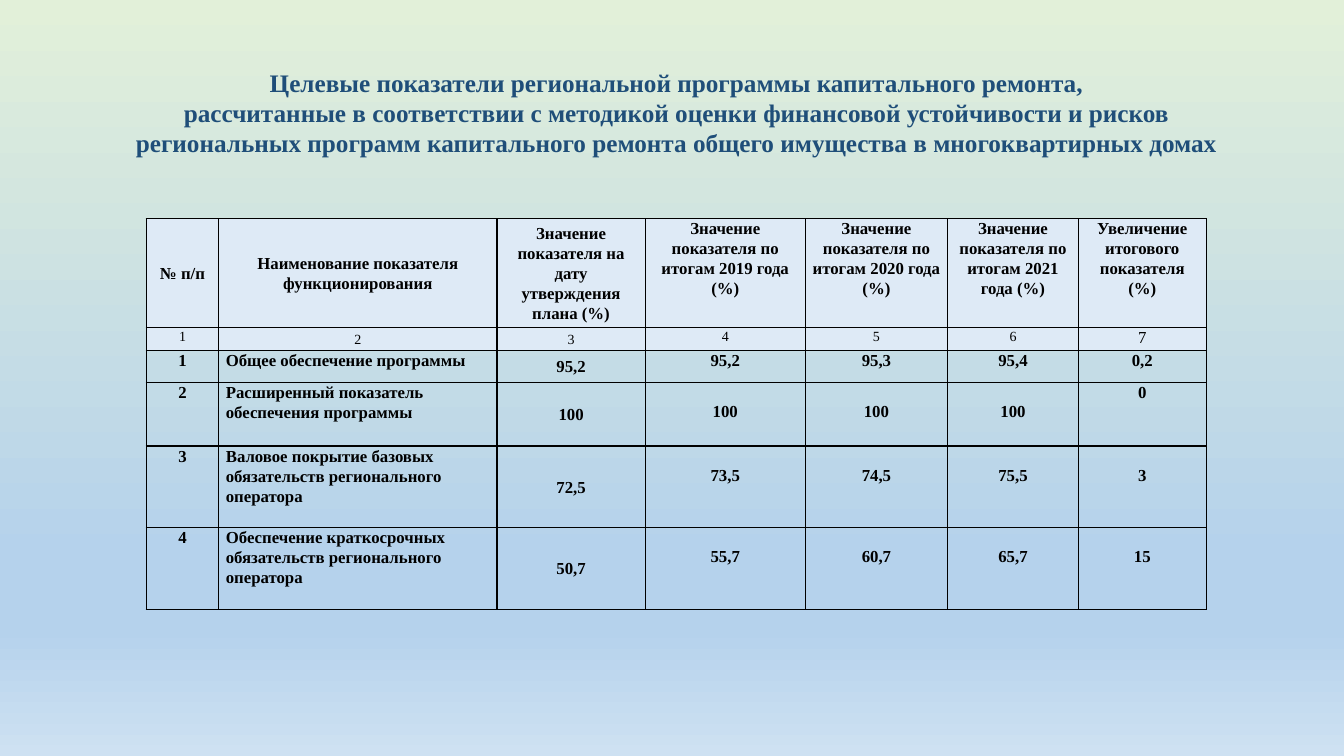
from dataclasses import dataclass

from lxml.etree import SubElement as Sub
from pptx import Presentation
from pptx.dml.color import RGBColor as Rgb
from pptx.enum.text import MSO_ANCHOR as Anchor, MSO_AUTO_SIZE as Fit, PP_ALIGN as Align
from pptx.oxml.ns import qn
from pptx.util import Inches, Pt


@dataclass(frozen=True)
class Theme:
    font: str = "Times New Roman"
    ink: str = "000000"
    title: str = "1F4E79"
    head: str = "DEEAF6"
    sky: tuple = ((0, "E2F0D9"), (74, "B5D2EC"), (83, "B5D2EC"), (100, "CEE1F2"))
    big: int = 18
    body: int = 12
    small: int = 10
    lead: float = 1.07
    rule: float = 1


TITLE = (
    "Целевые показатели региональной программы капитального ремонта,",
    "рассчитанные в соответствии с методикой оценки финансовой устойчивости и рисков "
    "региональных программ капитального ремонта общего имущества в многоквартирных домах",
)
HEADS = (
    "№ п/п",
    "Наименование показателя функционирования",
    "Значение показателя на дату утверждения плана (%)",
    *(f"Значение показателя по итогам {year} года (%)" for year in (2019, 2020, 2021)),
    "Увеличение итогового показателя (%)",
)
ROWS = (
    HEADS,
    tuple("1234567"),
    ("1", "Общее обеспечение программы", "95,2", "95,2", "95,3", "95,4", "0,2"),
    ("2", "Расширенный показатель обеспечения программы", "100", "100", "100", "100", "0"),
    ("3", "Валовое покрытие базовых обязательств регионального оператора",
     "72,5", "73,5", "74,5", "75,5", "3"),
    ("4", "Обеспечение краткосрочных обязательств регионального оператора",
     "50,7", "55,7", "60,7", "65,7", "15"),
)
# Percent of the slide's width and height
WIDTHS = (5.4, 20.7, 11.03, 11.92, 10.58, 9.74, 9.5)
HEIGHTS = (14.4, 3, 4.27, 8.4, 10.8, 10.8)


class Page:
    """A slide whose lengths are percent of its width and height."""

    def __init__(self, deck, theme):
        self.deck, self.theme = deck, theme
        self.slide = deck.slides.add_slide(deck.slide_layouts[5])

    def wide(self, share):
        return round(self.deck.slide_width * share / 100)

    def high(self, share):
        return round(self.deck.slide_height * share / 100)

    def back(self):
        fill = self.slide.background.fill
        fill.gradient()
        fill.gradient_angle = 270
        stops = next(self.slide.element.iter(qn("a:gsLst")))
        for old in list(stops):
            stops.remove(old)
        for spot, color in self.theme.sky:
            stop = Sub(stops, qn("a:gs"), pos=str(spot * 1000))
            Sub(stop, qn("a:srgbClr"), val=color)

    def text(self, para, words, size, color, bold=True, align=Align.CENTER):
        para.alignment = align
        run = para.add_run()
        run.text = words
        font = run.font
        font.name, font.size, font.bold = self.theme.font, Pt(size), bold
        font.color.rgb = Rgb.from_string(color)

    def title(self, lines, left, top, width, height):
        shape = self.slide.shapes.title
        shape.left, shape.top = self.wide(left), self.high(top)
        shape.width, shape.height = self.wide(width), self.high(height)
        frame = shape.text_frame
        frame.word_wrap, frame.auto_size = True, Fit.NONE
        frame.vertical_anchor = Anchor.MIDDLE
        for i, line in enumerate(lines):
            para = frame.add_paragraph() if i else frame.paragraphs[0]
            self.text(para, line, self.theme.big, self.theme.title)

    def frame(self, cell):
        """Rule all four sides of a cell."""
        props = cell._tc.get_or_add_tcPr()
        for side in "LRTB":
            line = Sub(props, qn(f"a:ln{side}"), w=str(Pt(self.theme.rule)))
            Sub(Sub(line, qn("a:solidFill")), qn("a:srgbClr"), val=self.theme.ink)

    def cell(self, cell, words, row, col):
        theme = self.theme
        last = len(HEADS) - 1
        self.frame(cell)
        if row < 2:
            cell.fill.solid()
            cell.fill.fore_color.rgb = Rgb.from_string(theme.head)
        else:
            cell.fill.background()
        lower = row > 2 and col > 2 and words != "0"
        cell.margin_left = cell.margin_right = Inches(0.07)
        cell.margin_top, cell.margin_bottom = Inches(0.19 if lower else 0), 0
        mid = col == 2 or (row < 2 and col == 1) or row == col == 0
        cell.vertical_anchor = Anchor.MIDDLE if mid else Anchor.TOP
        para = cell.text_frame.paragraphs[0]
        para.line_spacing = theme.lead
        if row == 0 and col < 4:
            para.space_before = para.space_after = Pt(3)
        size = theme.small if row == 1 and col < last else theme.body
        align = Align.LEFT if row > 1 and col == 1 else Align.CENTER
        self.text(para, words, size, theme.ink, row != 1, align)

    def table(self, rows, left, top, widths, heights):
        grid = self.slide.shapes.add_table(
            len(rows), len(widths), self.wide(left), self.high(top),
            self.wide(sum(widths)), self.high(sum(heights))).table
        grid.first_row = grid.horz_banding = False
        for col, share in zip(grid.columns, widths):
            col.width = self.wide(share)
        for row, share in zip(grid.rows, heights):
            row.height = self.high(share)
        for r, cells in enumerate(rows):
            for c, words in enumerate(cells):
                self.cell(grid.cell(r, c), words, r, c)


def main():
    deck = Presentation()
    deck.slide_width, deck.slide_height = Inches(13.33), Inches(7.5)
    page = Page(deck, Theme())
    page.back()
    page.title(TITLE, 7.65, 8.13, 85.37, 13.47)
    page.table(ROWS, 10.88, 28.93, WIDTHS, HEIGHTS)
    deck.save("out.pptx")


if __name__ == "__main__":
    main()
